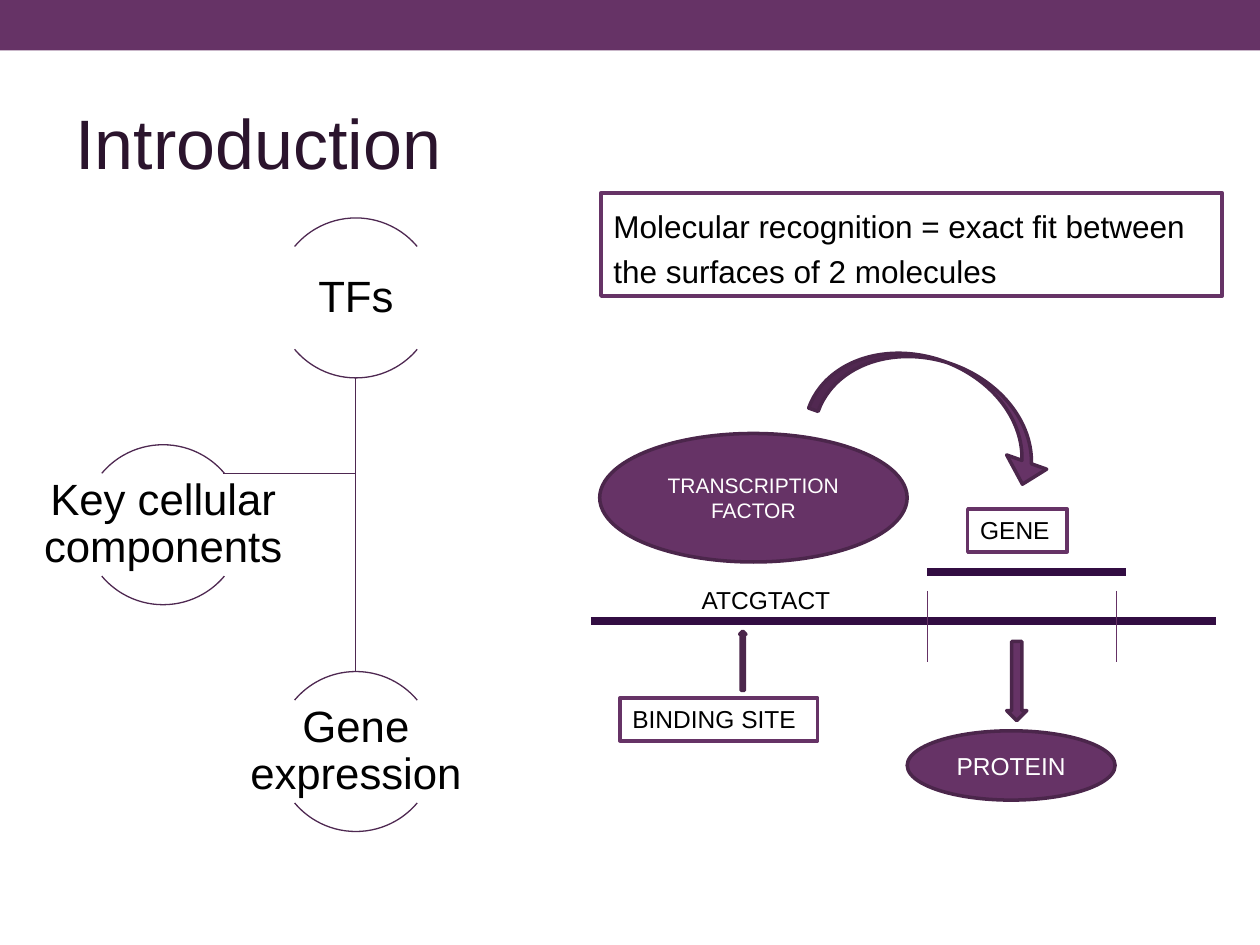
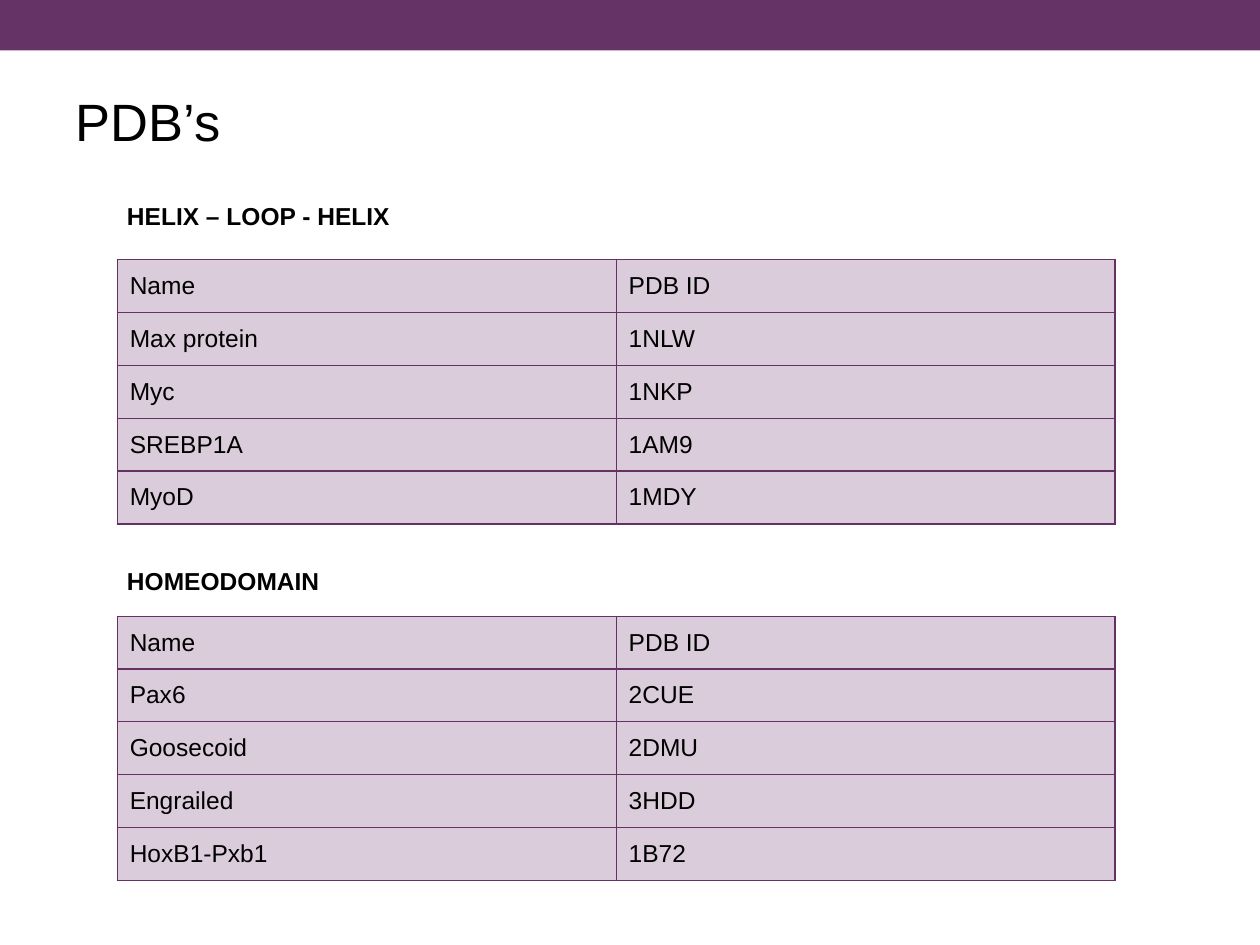
from lxml import etree
from pptx import Presentation
from pptx.dml.color import RGBColor
from pptx.enum.shapes import MSO_CONNECTOR, MSO_SHAPE
from pptx.enum.text import MSO_ANCHOR, MSO_AUTO_SIZE, PP_ALIGN
from pptx.oxml.ns import qn
from pptx.util import Inches, Pt

FONT = "Arial"
PLUM = "663366"
DARK_PLUM = "4B264B"
BRANCH = "4E2851"
STRAND = "320D42"
BORDER = "653165"
CELL = "DACCDA"
TITLE = "2B142D"
BLACK = "000000"
WHITE = "FFFFFF"


def colour(code):
    return RGBColor.from_string(code)


class SlideBuilder:
    def __init__(self):
        self.deck = Presentation()
        self.deck.slide_width = Inches(10)
        self.deck.slide_height = Inches(7.5)
        self.page = None

    def new_page(self, title, place, size, ink):
        self.page = self.deck.slides.add_slide(self.deck.slide_layouts[5])
        self.shape(MSO_SHAPE.RECTANGLE, (0, 0, 10, 0.4), fill=PLUM)
        holder = self.page.shapes.title
        holder.left, holder.top, holder.width, holder.height = map(Inches, place)
        self.set_text(holder, title, size, ink, anchor=MSO_ANCHOR.MIDDLE)

    def set_text(self, target, text, size, ink=BLACK, bold=False, align=PP_ALIGN.LEFT,
                 anchor=MSO_ANCHOR.TOP, spacing=None, side=0.1, edge=0.05):
        frame = target.text_frame
        frame.word_wrap = True
        frame.auto_size = MSO_AUTO_SIZE.NONE
        frame.vertical_anchor = anchor
        frame.margin_left = frame.margin_right = Inches(side)
        frame.margin_top = frame.margin_bottom = Inches(edge)
        para = frame.paragraphs[0]
        para.alignment = align
        if spacing:
            para.line_spacing = spacing
        self.add_span(para, text, size, ink, bold)

    def add_span(self, para, text, size, ink=BLACK, bold=False):
        span = para.add_run()
        span.text = text
        span.font.name = FONT
        span.font.size = Pt(size)
        span.font.bold = bold
        span.font.color.rgb = colour(ink)

    def text(self, text, place, size, **style):
        box = self.page.shapes.add_textbox(*map(Inches, place))
        self.set_text(box, text, size, **style)

    def paint(self, shape, fill, line, weight):
        shape.shadow.inherit = False
        if fill:
            shape.fill.solid()
            shape.fill.fore_color.rgb = colour(fill)
        else:
            shape.fill.background()
        if line:
            shape.line.color.rgb = colour(line)
            shape.line.width = Pt(weight)
        else:
            shape.line.fill.background()

    def shape(self, kind, place, fill=None, line=None, weight=2, adjust=(), turn=0):
        shape = self.page.shapes.add_shape(kind, *map(Inches, place))
        for index, value in enumerate(adjust):
            shape.adjustments[index] = value
        shape.rotation = turn
        self.paint(shape, fill, line, weight)
        return shape

    def framed_label(self, text, place, size=14, spacing=None):
        label = self.shape(MSO_SHAPE.RECTANGLE, place, WHITE, PLUM)
        self.set_text(label, text, size, spacing=spacing)

    def molecule(self, text, place, size):
        oval = self.shape(MSO_SHAPE.OVAL, place, PLUM, DARK_PLUM)
        self.set_text(oval, text, size, WHITE, align=PP_ALIGN.CENTER, anchor=MSO_ANCHOR.MIDDLE)

    def arrow(self, kind, place, **form):
        self.shape(kind, place, PLUM, DARK_PLUM, **form)

    def line(self, start, end, ink, weight):
        line = self.page.shapes.add_connector(
            MSO_CONNECTOR.STRAIGHT, *map(Inches, start + end))
        line.line.color.rgb = colour(ink)
        line.line.width = Pt(weight)
        etree.SubElement(line._element.spPr, qn("a:effectLst"))

    def polyline(self, points, ink, weight):
        corners = [(Inches(x), Inches(y)) for x, y in points]
        builder = self.page.shapes.build_freeform(*corners[0])
        builder.add_line_segments(corners[1:], close=False)
        self.paint(builder.convert_to_shape(), None, ink, weight)

    def node(self, text, left, top):
        diameter = 1.27
        for angles in ((132, 192), (24, 84)):
            self.shape(MSO_SHAPE.ARC, (left, top, diameter, diameter),
                       line=BRANCH, weight=0.75, adjust=angles)
        width = 2.53
        self.text(text, (left + (diameter - width) / 2, top + 0.23, width, 0.81), 25,
                  align=PP_ALIGN.CENTER, anchor=MSO_ANCHOR.MIDDLE,
                  spacing=0.9, side=0.02, edge=0.02)

    def table(self, rows, left, top, column_width=3.96, row_height=0.42):
        table = self.page.shapes.add_table(
            len(rows), len(rows[0]), Inches(left), Inches(top),
            Inches(column_width * len(rows[0])), Inches(row_height * len(rows))).table
        table.first_row = False
        table.horz_banding = False
        for row_index, row in enumerate(rows):
            for column_index, value in enumerate(row):
                self.cell(table.cell(row_index, column_index), value)

    def cell(self, cell, value):
        cell.margin_left = cell.margin_right = Inches(0.1)
        cell.margin_top = cell.margin_bottom = Inches(0.1)
        self.add_span(cell.text_frame.paragraphs[0], value, 14)
        properties = cell._tc.get_or_add_tcPr()
        for side in ("a:lnL", "a:lnR", "a:lnT", "a:lnB"):
            border = etree.SubElement(properties, qn(side), w=str(Pt(0.75)))
            fill = etree.SubElement(border, qn("a:solidFill"))
            etree.SubElement(fill, qn("a:srgbClr"), val=BORDER)
        cell.fill.solid()
        cell.fill.fore_color.rgb = colour(CELL)


def build_introduction(builder):
    builder.new_page("Introduction", (0.5, 0.58, 9, 1.08), 40, TITLE)

    trunk = 2.82
    builder.polyline([(trunk, 3), (trunk, 3.76), (1.77, 3.76)], BRANCH, 0.75)
    builder.line((trunk, 3), (trunk, 5.33), BRANCH, 0.75)
    for text, left, top in (("TFs", 2.19, 1.73),
                            ("Gene expression", 2.19, 5.33),
                            ("Key cellular components", 0.66, 3.53)):
        builder.node(text, left, top)

    builder.framed_label("Molecular recognition = exact fit between the surfaces of 2 molecules",
                         (4.77, 1.53, 4.93, 0.82), 18, 1.2)

    builder.line((4.69, 4.93), (9.65, 4.93), STRAND, 4.5)
    for gene_edge in (7.36, 8.86):
        builder.line((gene_edge, 4.69), (gene_edge, 5.25), BORDER, 0.75)
    builder.line((7.36, 4.54), (8.94, 4.54), STRAND, 4.5)
    builder.framed_label("GENE", (7.68, 4.04, 0.79, 0.34))
    builder.molecule("TRANSCRIPTION FACTOR", (4.76, 3.44, 2.44, 1.02), 12)
    builder.molecule("PROTEIN", (7.2, 5.8, 1.65, 0.55), 14)
    builder.arrow(MSO_SHAPE.CURVED_DOWN_ARROW, (6.48, 2.88, 1.97, 0.71),
                  adjust=(0.112, 0.475, 0.249), turn=19.6)
    builder.arrow(MSO_SHAPE.DOWN_ARROW, (7.99, 5.09, 0.16, 0.63))
    builder.text("ATCGTACT", (5.47, 4.59, 2.05, 0.34), 14)
    builder.framed_label("BINDING SITE", (4.92, 5.54, 1.57, 0.34))
    builder.arrow(MSO_SHAPE.UP_ARROW, (5.87, 5.01, 0.05, 0.47))


def build_structures(builder):
    builder.new_page("PDB’s", (0.5, 0.53, 9, 0.86), 30, BLACK)
    header = ("Name", "PDB ID")
    families = (
        ("HELIX – LOOP - HELIX", 1.55, 2.06,
         (("Max protein", "1NLW"), ("Myc", "1NKP"), ("SREBP1A", "1AM9"), ("MyoD", "1MDY"))),
        ("HOMEODOMAIN", 4.44, 4.89,
         (("Pax6", "2CUE"), ("Goosecoid", "2DMU"), ("Engrailed", "3HDD"),
          ("HoxB1-Pxb1", "1B72"))),
    )
    for family, heading_top, table_top, proteins in families:
        builder.text(family, (0.91, heading_top, 3.54, 0.34), 14, bold=True)
        builder.table((header, *proteins), 0.93, table_top)


def main():
    builder = SlideBuilder()
    build_introduction(builder)
    build_structures(builder)
    builder.deck.save("out.pptx")


if __name__ == "__main__":
    main()
